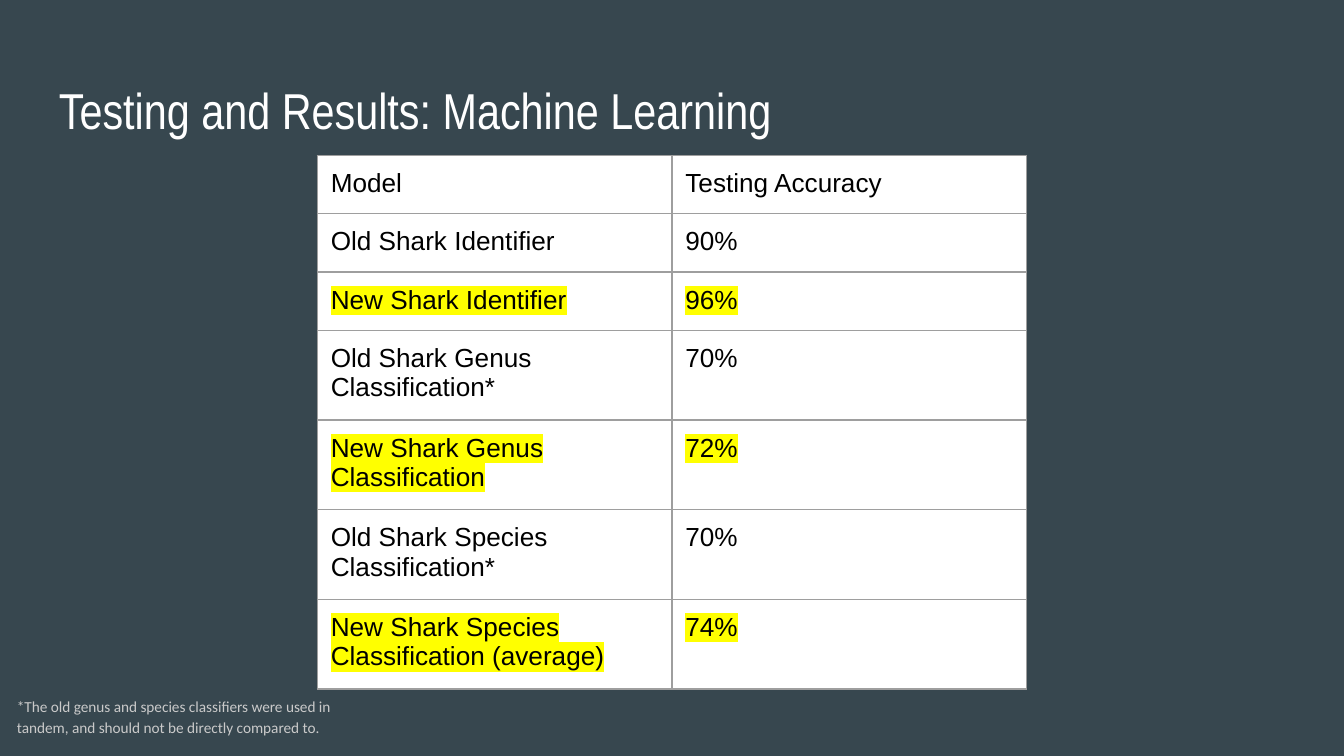
from lxml.etree import SubElement
from pptx import Presentation
from pptx.dml.color import RGBColor
from pptx.enum.text import MSO_ANCHOR
from pptx.oxml import parse_xml
from pptx.oxml.ns import nsdecls, qn
from pptx.util import Pt

SLATE = RGBColor(0x37, 0x47, 0x4F)
WHITE = RGBColor(0xFF, 0xFF, 0xFF)
BLACK = RGBColor(0x00, 0x00, 0x00)
GREY = RGBColor(0x9E, 0x9E, 0x9E)
SILVER = RGBColor(0xCA, 0xCA, 0xCA)
YELLOW = RGBColor(0xFF, 0xFF, 0x00)

INSET = Pt(7.2)
MARGINS = {f"margin_{side}": INSET for side in ("left", "top", "right", "bottom")}


def set_all(target, values):
    for key, value in values.items():
        setattr(target, key, value)


def write(frame, text, size, font, color):
    paragraph = frame.paragraphs[0]
    run = paragraph.add_run()
    run.text = text
    set_all(run.font, {"size": Pt(size), "name": font})
    run.font.color.rgb = color
    return paragraph


deck = Presentation()
set_all(deck, {"slide_width": Pt(720), "slide_height": Pt(405)})
slide = deck.slides.add_slide(deck.slide_layouts[6])
slide.background.fill.solid()
slide.background.fill.fore_color.rgb = SLATE

heading = slide.shapes.add_textbox(Pt(24.5), Pt(35), Pt(671), Pt(45.5)).text_frame
set_all(heading, {"word_wrap": True, "vertical_anchor": MSO_ANCHOR.TOP, **MARGINS})
write(heading, "Testing and Results: Machine Learning", 27, "Arial Narrow", WHITE)

results = [
    ("Model", "Testing Accuracy", 30),
    ("Old Shark Identifier", "90%", 30),
    ("New Shark Identifier", "96%", 30),
    ("Old Shark Genus Classification*", "70%", 46),
    ("New Shark Genus Classification", "72%", 46),
    ("Old Shark Species Classification*", "70%", 46),
    ("New Shark Species Classification (average)", "74%", 46),
]
total_height = sum(height for *_, height in results)
accuracy = slide.shapes.add_table(
    len(results), 2, Pt(170), Pt(83.25), Pt(380), Pt(total_height)
).table
set_all(accuracy, {"first_row": False, "horz_banding": False})
for column in accuracy.columns:
    column.width = Pt(190)

for row, (model, score, height) in enumerate(results):
    accuracy.rows[row].height = Pt(height)
    for col, text in enumerate((model, score)):
        cell = accuracy.cell(row, col)
        set_all(cell, {"vertical_anchor": MSO_ANCHOR.TOP, **MARGINS})
        cell.fill.solid()
        cell.fill.fore_color.rgb = WHITE
        paragraph = write(cell.text_frame, text, 14, "Arial", BLACK)
        if model.startswith("New"):
            highlight = parse_xml(f'<a:highlight {nsdecls("a")}/>')
            SubElement(highlight, qn("a:srgbClr"), val=str(YELLOW))
            properties = paragraph.runs[0].font._element
            properties.find(qn("a:solidFill")).addnext(highlight)
        for position, side in enumerate("LRTB"):
            border = parse_xml(f'<a:ln{side} {nsdecls("a")} w="{Pt(0.75)}"/>')
            SubElement(SubElement(border, qn("a:solidFill")), qn("a:srgbClr"), val=str(GREY))
            cell._tc.get_or_add_tcPr().insert(position, border)

footnote = slide.shapes.add_textbox(Pt(2), Pt(365), Pt(196), Pt(65.5)).text_frame
set_all(footnote, {"word_wrap": True, "vertical_anchor": MSO_ANCHOR.TOP, **MARGINS})
caveat = write(
    footnote,
    "*The old genus and species classifiers were used in tandem, "
    "and should not be directly compared to.",
    8.2, "Calibri", SILVER,
)
set_all(caveat, {"line_spacing": 1.15, "space_after": Pt(12)})

deck.save("out.pptx")
